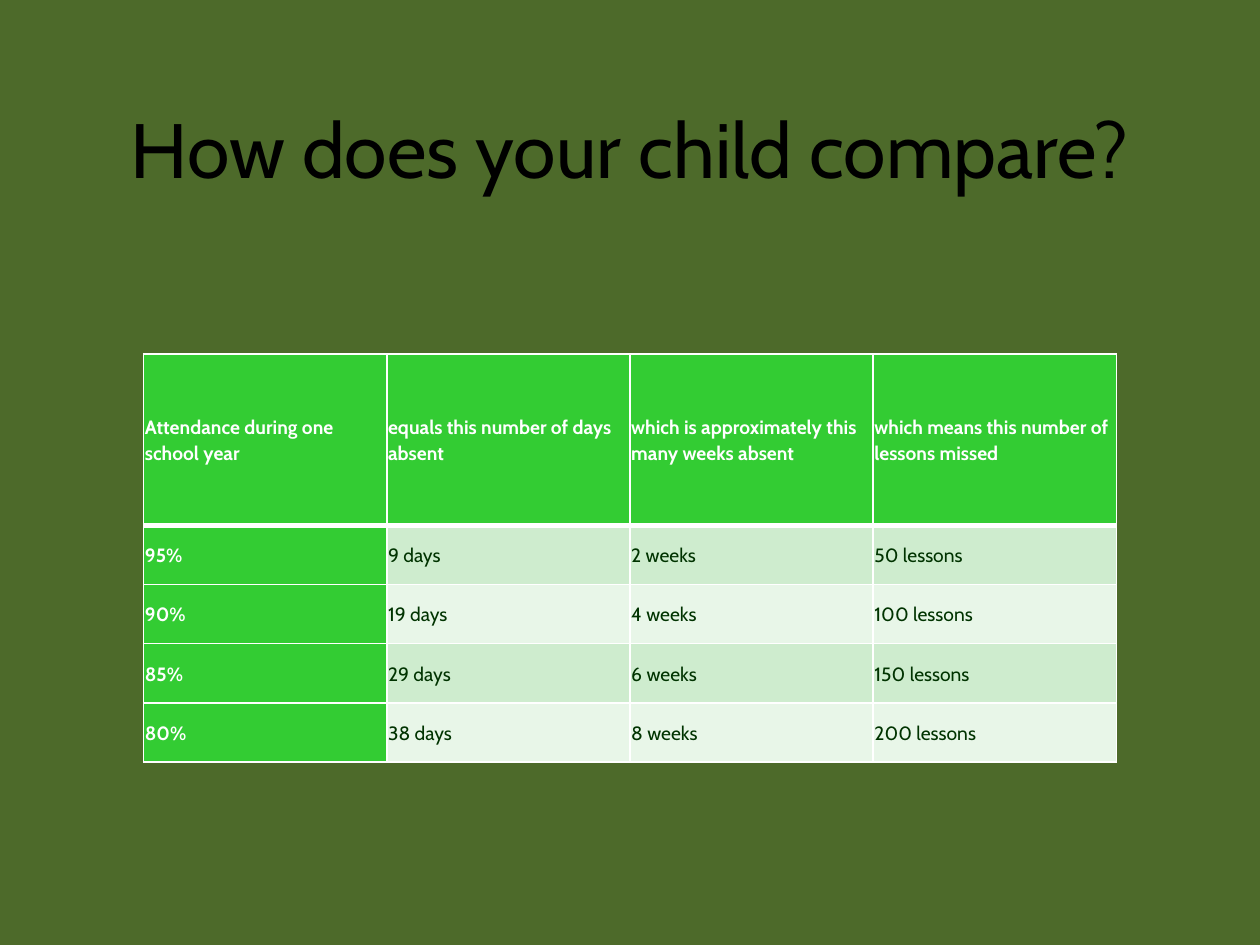
from dataclasses import dataclass

import pptx
import pptx.dml.color
import pptx.enum.text
import pptx.oxml
import pptx.oxml.ns
import pptx.util


@dataclass(frozen=True)
class Theme:
    font: str = "Cabin"
    background: str = "4D6A2A"
    title: str = "000000"
    accent: str = "33CC33"
    on_accent: str = "FFFFFF"
    bands: tuple = ("CEECCE", "E8F6E8")
    body: str = "003300"
    border: str = "FFFFFF"
    title_size: int = 44
    table_size: int = 11


def rgb(value):
    return pptx.dml.color.RGBColor.from_string(value)


class Deck:
    """Places elements on a grid of 100 columns by 75 rows."""

    def __init__(self, theme):
        self.theme = theme
        self.prs = pptx.Presentation()
        self.prs.slide_width = pptx.util.Inches(10)
        self.prs.slide_height = pptx.util.Inches(7.5)
        self.s = self.prs.slides.add_slide(self.prs.slide_layouts[6])
        self.s.background.fill.solid()
        self.s.background.fill.fore_color.rgb = rgb(theme.background)

    def x(self, columns):
        return round(self.prs.slide_width * columns / 100)

    def y(self, rows):
        return round(self.prs.slide_height * rows / 75)

    def style(self, p, size, color, bold=False):
        p.font.name = self.theme.font
        p.font.size = pptx.util.Pt(size)
        p.font.color.rgb = rgb(color)
        p.font.bold = bold

    def title(self, text, left, top, width, height):
        sp = self.s.shapes.add_textbox(self.x(left), self.y(top), self.x(width), self.y(height))
        tf = sp.text_frame
        tf.word_wrap = True
        tf.vertical_anchor = pptx.enum.text.MSO_ANCHOR.MIDDLE
        p = tf.paragraphs[0]
        p.text = text
        p.alignment = pptx.enum.text.PP_ALIGN.CENTER
        self.style(p, self.theme.title_size, self.theme.title)

    def borders(self, cell, widths):
        """Draw cell borders; widths maps a side (L, R, T, B) to points."""
        tcPr = cell._tc.get_or_add_tcPr()
        for side, width in widths.items():
            tcPr.append(pptx.oxml.parse_xml(
                f'<a:ln{side} {pptx.oxml.ns.nsdecls("a")} w="{pptx.util.Pt(width)}">'
                f'<a:solidFill><a:srgbClr val="{self.theme.border}"/></a:solidFill>'
                f'</a:ln{side}>'))

    def cell(self, cell, text, fill, color, bold, widths):
        self.borders(cell, widths)
        cell.fill.solid()
        cell.fill.fore_color.rgb = rgb(fill)
        cell.vertical_anchor = pptx.enum.text.MSO_ANCHOR.MIDDLE
        inset = pptx.util.Inches(0.01)
        cell.margin_left = cell.margin_right = inset
        cell.margin_top = cell.margin_bottom = inset
        p = cell.text_frame.paragraphs[0]
        p.text = text
        p.line_spacing = 1.07
        p.space_after = pptx.util.Pt(8)
        self.style(p, self.theme.table_size, color, bold)

    def table(self, data, left, top, width, header_height, row_height):
        """Add a table with an accented first row and column and banded rows."""
        t = self.theme
        heights = [header_height] + [row_height] * (len(data) - 1)
        table = self.s.shapes.add_table(
            len(data), len(data[0]), self.x(left), self.y(top),
            self.x(width), self.y(sum(heights))).table
        table.first_col = True
        for i, (row, height) in enumerate(zip(data, heights)):
            table.rows[i].height = self.y(height)
            widths = {"L": 1, "R": 1, "T": 3 if i == 1 else 1, "B": 3 if i == 0 else 1}
            for j, text in enumerate(row):
                accented = i == 0 or j == 0
                fill = t.accent if accented else t.bands[(i - 1) % 2]
                color = t.on_accent if accented else t.body
                self.cell(table.cell(i, j), text, fill, color, accented, widths)


ATTENDANCE = [
    ("Attendance during one school year", "equals this number of days absent",
     "which is approximately this many weeks absent",
     "which means this number of lessons missed"),
    ("95%", "9 days", "2 weeks", "50 lessons"),
    ("90%", "19 days", "4 weeks", "100 lessons"),
    ("85%", "29 days", "6 weeks", "150 lessons"),
    ("80%", "38 days", "8 weeks", "200 lessons"),
]


def main():
    deck = Deck(Theme())
    deck.title("How does your child compare?", 5, 4.2, 90, 15)
    deck.table(ATTENDANCE, 11.4, 28.1, 77.2, header_height=13.6, row_height=4.7)
    deck.prs.save("out.pptx")


if __name__ == "__main__":
    main()
